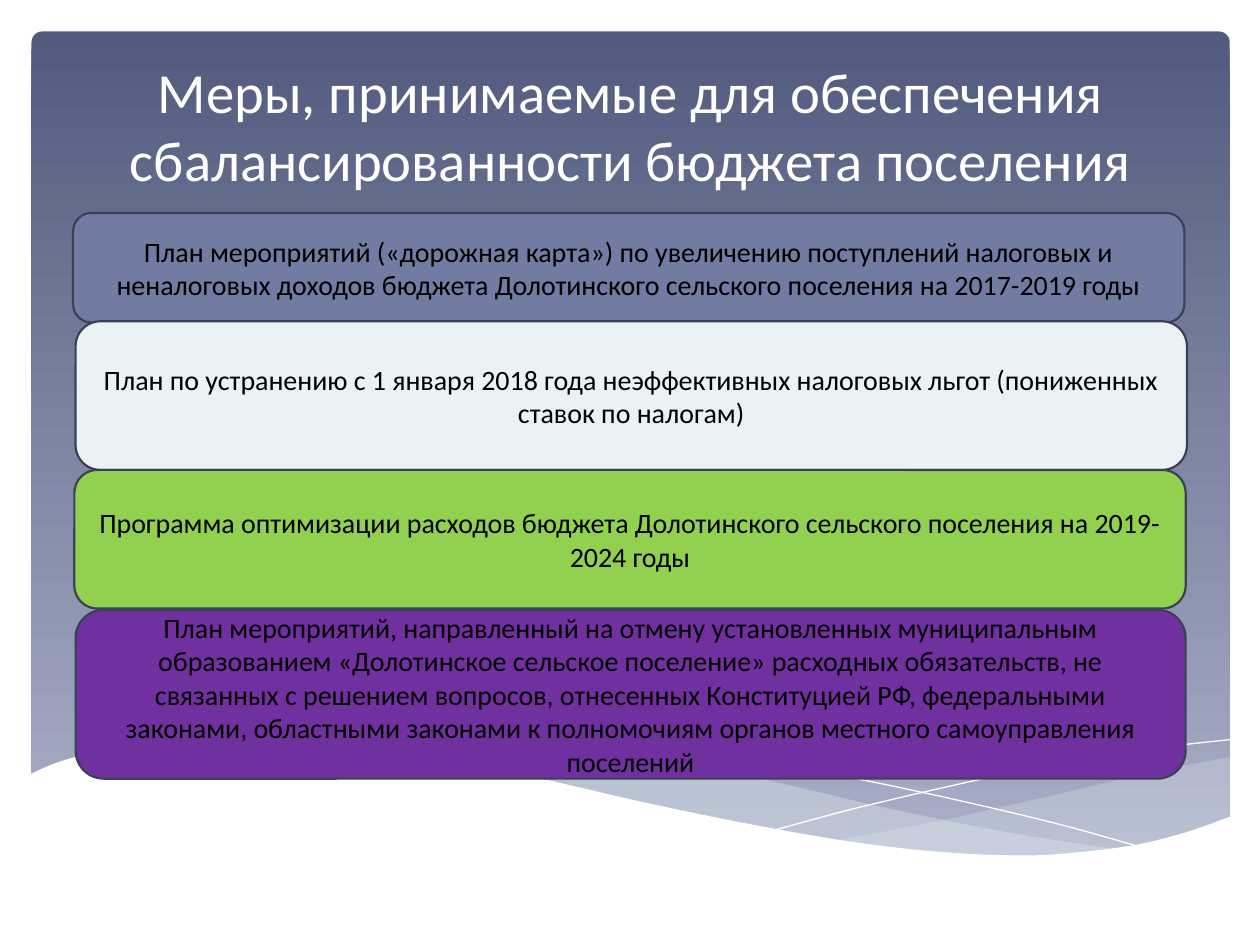
from lxml import etree
from pptx import Presentation
from pptx.dml.color import RGBColor
from pptx.enum.shapes import MSO_SHAPE
from pptx.enum.text import MSO_ANCHOR, PP_ALIGN
from pptx.oxml.ns import qn
from pptx.util import Inches, Pt

ROUNDED = MSO_SHAPE.ROUNDED_RECTANGLE
CENTER = PP_ALIGN.CENTER
MIDDLE = MSO_ANCHOR.MIDDLE
BOTTOM = MSO_ANCHOR.BOTTOM

WHITE = RGBColor(0xFF, 0xFF, 0xFF)
BLACK = RGBColor(0x00, 0x00, 0x00)
PANEL_TOP = RGBColor(0x52, 0x5B, 0x7E)
PANEL_BOTTOM = RGBColor(0xAA, 0xB0, 0xC8)
WAVE = RGBColor(0xDD, 0xE9, 0xEC)
OUTLINE = RGBColor(0x3B, 0x41, 0x55)
SLATE = RGBColor(0x72, 0x7C, 0xA3)
PALE = RGBColor(0xEB, 0xF2, 0xF4)
GREEN = RGBColor(0x92, 0xD0, 0x50)
PURPLE = RGBColor(0x70, 0x30, 0xA0)

FONT = "Calibri"
CURVE_STEPS = 5

TITLE = "Меры, принимаемые для обеспечения сбалансированности бюджета поселения"
MEASURES = [
    (0.58, 1.69, 8.82, 0.87, SLATE,
     "План мероприятий («дорожная карта») по увеличению поступлений налоговых и "
     "неналоговых доходов бюджета Долотинского сельского поселения на 2017-2019 годы"),
    (0.6, 2.55, 8.82, 1.18, PALE,
     "План по устранению с 1 января 2018 года неэффективных налоговых льгот "
     "(пониженных ставок по налогам)"),
    (0.59, 3.73, 8.82, 1.1, GREEN,
     "Программа оптимизации расходов бюджета Долотинского сельского поселения "
     "на 2019-2024 годы"),
    (0.6, 4.84, 8.81, 1.34, PURPLE,
     "План мероприятий, направленный на отмену установленных муниципальным образованием "
     "«Долотинское сельское поселение» расходных обязательств, не связанных с решением "
     "вопросов, отнесенных Конституцией РФ, федеральными законами, областными законами "
     "к полномочиям органов местного самоуправления поселений"),
]

RIGHT_WAVE_TOP = [(9.76, 6.01), (9.22, 6.11), (8.62, 6.25), (7.8, 6.44), (7.07, 6.59), (6.62, 6.67)]
RIGHT_WAVE_BOTTOM = [(6.62, 6.67), (7.33, 6.76), (8.04, 6.8), (8.73, 6.76), (9.22, 6.67), (9.77, 6.49)]
MIDDLE_WAVE_TOP = [(8.94, 6.75), (8.08, 6.62), (7.07, 6.42), (6.3, 6.24), (5.55, 6.07),
                   (4.89, 5.96), (4.2, 5.89), (3.62, 5.87), (2.87, 5.93)]
MIDDLE_WAVE_BOTTOM = [(2.87, 5.93), (3.63, 6.04), (4.5, 6.24), (5.3, 6.42), (6.02, 6.57),
                      (6.81, 6.7), (7.49, 6.78), (8.19, 6.8), (8.94, 6.75)]
FALLING_LINE = [(3.1, 5.97), (3.44, 5.92), (4.02, 5.89), (4.69, 5.9), (5.57, 5.98),
                (6.37, 6.1), (7.28, 6.28), (8.32, 6.52), (9.08, 6.73)]
RISING_LINE = [(6.14, 6.59), (6.73, 6.43), (7.49, 6.25), (8.37, 6.06), (8.97, 5.96), (9.76, 5.87)]
FRONT_WAVE = [(9.77, 6.48), (9.4, 6.61), (8.99, 6.71), (8.5, 6.77), (8.09, 6.79), (7.44, 6.76),
              (6.68, 6.67), (5.79, 6.51), (5.03, 6.35), (4.47, 6.22), (3.65, 6.04), (2.92, 5.92),
              (2.3, 5.87), (1.77, 5.86), (1.19, 5.89), (0.76, 5.97), (0.46, 6.05), (0.23, 6.15)]
FRONT_BASE = [(0.23, 7.31), (9.77, 7.31)]


def smooth_curve(knots):
    """Return points of a Catmull-Rom curve through the knots."""
    padded = [knots[0], *knots, knots[-1]]
    points = [knots[0]]
    for before, start, end, after in zip(padded, padded[1:], padded[2:], padded[3:]):
        for step in range(1, CURVE_STEPS + 1):
            t = step / CURVE_STEPS
            points.append(tuple(
                (2 * b + (c - a) * t + (2 * a - 5 * b + 4 * c - d) * t ** 2
                 + (3 * b - a - 3 * c + d) * t ** 3) / 2
                for a, b, c, d in zip(before, start, end, after)))
    return points


def add_outline(slide, points, closed):
    """Add a freeform through points given in inches."""
    corners = [(Inches(x), Inches(y)) for x, y in points]
    builder = slide.shapes.build_freeform(*corners[0], scale=1.0)
    builder.add_line_segments(corners[1:], close=closed)
    shape = builder.convert_to_shape()
    shape.shadow.inherit = False
    return shape


def add_wave(slide, points, color, opacity=100):
    """Add a filled wave with the given opacity in percent."""
    shape = add_outline(slide, points, True)
    shape.fill.solid()
    shape.fill.fore_color.rgb = color
    shape.line.fill.background()
    if opacity < 100:
        color_element = shape.fill._xPr.find(qn("a:solidFill"))[0]
        etree.SubElement(color_element, qn("a:alpha")).set("val", str(opacity * 1000))


def add_wave_line(slide, knots):
    """Add a white hairline curve."""
    shape = add_outline(slide, smooth_curve(knots), False)
    shape.fill.background()
    shape.line.color.rgb = WHITE
    shape.line.width = Pt(0)


def add_background(slide, left, top, width, height):
    """Add the gradient panel and the waves across its foot."""
    panel = slide.shapes.add_shape(ROUNDED, left, top, width, height)
    panel.adjustments[0] = 0.013
    panel.shadow.inherit = False
    panel.line.fill.background()
    panel.fill.gradient()
    panel.fill.gradient_angle = 270
    for stop, position, color in zip(panel.fill.gradient_stops, (0, 1), (PANEL_TOP, PANEL_BOTTOM)):
        stop.position = position
        stop.color.rgb = color
    add_wave(slide, smooth_curve(RIGHT_WAVE_TOP) + smooth_curve(RIGHT_WAVE_BOTTOM), WAVE, 29)
    add_wave(slide, smooth_curve(MIDDLE_WAVE_TOP) + smooth_curve(MIDDLE_WAVE_BOTTOM), WAVE, 40)
    add_wave_line(slide, FALLING_LINE)
    add_wave_line(slide, RISING_LINE)
    add_wave(slide, smooth_curve(FRONT_WAVE) + FRONT_BASE, WHITE)


def write_text(shape, text, size, color, anchor):
    """Write one centred paragraph into a shape."""
    frame = shape.text_frame
    frame.word_wrap = True
    frame.vertical_anchor = anchor
    paragraph = frame.paragraphs[0]
    paragraph.text = text
    paragraph.alignment = CENTER
    paragraph.font.name = FONT
    paragraph.font.size = Pt(size)
    paragraph.font.color.rgb = color


def add_title(slide, left, top, width, height):
    """Add the slide title."""
    title = slide.shapes.add_textbox(left, top, width, height)
    write_text(title, TITLE, 32.4, WHITE, BOTTOM)


def add_measure(slide, left, top, width, height, color, text):
    """Add one rounded box with a budget measure."""
    box = slide.shapes.add_shape(ROUNDED, left, top, width, height)
    box.shadow.inherit = False
    box.fill.solid()
    box.fill.fore_color.rgb = color
    box.line.color.rgb = OUTLINE
    box.line.width = Pt(1.25)
    write_text(box, text, 16, BLACK, MIDDLE)


def main():
    """Build and save the slide."""
    presentation = Presentation()
    presentation.slide_width = Inches(10)
    presentation.slide_height = Inches(7.5)
    slide = presentation.slides.add_slide(presentation.slide_layouts[6])
    add_background(slide, Inches(0.25), Inches(0.25), Inches(9.51), Inches(6.6))
    add_title(slide, Inches(0.28), Inches(0.29), Inches(9.45), Inches(1.29))
    for *box, color, text in MEASURES:
        add_measure(slide, *map(Inches, box), color, text)
    presentation.save("out.pptx")


if __name__ == "__main__":
    main()
